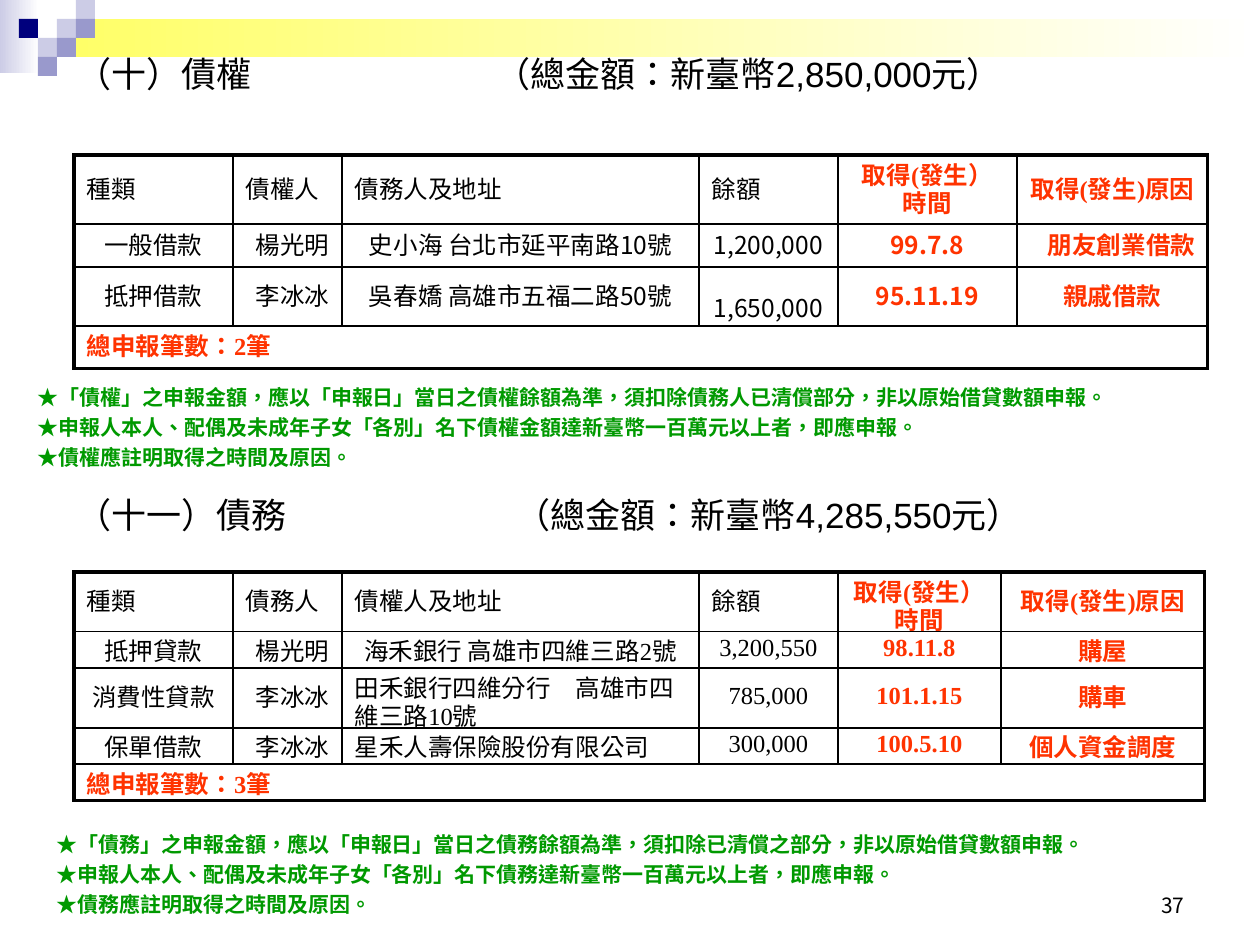
from lxml import etree
from pptx import Presentation
from pptx import util as u
from pptx.dml.color import RGBColor
from pptx.enum import shapes, text
from pptx.oxml import ns

PX = 914400 / 126
BLACK, RED, GREEN = "000000", "FF3300", "009900"
ARIAL, TIMES, NOTO = "Arial", "Times New Roman", "Noto Sans CJK SC"
LEFT, CENTER, RIGHT = text.PP_ALIGN.LEFT, text.PP_ALIGN.CENTER, text.PP_ALIGN.RIGHT
MIDDLE, BOTTOM = text.MSO_ANCHOR.MIDDLE, text.MSO_ANCHOR.BOTTOM


def px(length):
    return u.Emu(round(length * PX))


def color(value):
    return RGBColor.from_string(value)


def add_child(parent, tag, **attributes):
    return etree.SubElement(parent, ns.qn(tag), attributes)


def write(para, words, size, font, ink=BLACK, bold=False, align=LEFT, spacing=1.0):
    para.text = words
    para.alignment = align
    para.line_spacing = spacing
    for span in para.runs:
        span.font.size = u.Pt(size)
        span.font.name = font
        span.font.bold = bold
        span.font.color.rgb = color(ink)
        properties = span._r.get_or_add_rPr()
        properties.set("lang", "zh-TW")
        add_child(properties, "a:ea", typeface=NOTO)


def text_box(page, box, anchor=MIDDLE):
    frame = page.shapes.add_textbox(*map(px, box)).text_frame
    frame.word_wrap = True
    frame.vertical_anchor = anchor
    return frame


def rectangle(page, box, *inks):
    shape = page.shapes.add_shape(shapes.MSO_SHAPE.RECTANGLE, *map(px, box))
    shape.shadow.inherit = False
    shape.line.fill.background()
    if len(inks) == 1:
        shape.fill.solid()
        shape.fill.fore_color.rgb = color(inks[0])
    else:
        shape.fill.gradient()
        shape.fill.gradient_angle = 0
        for stop, ink in zip(shape.fill.gradient_stops, inks):
            stop.color.rgb = color(ink)


def decoration(page, box):
    left, top, width, side = box
    pale, violet, navy = "CCCCE6", "9999CC", "00007D"
    rectangle(page, (left, top, 2 * side + 1, 4 * side - 3), pale, "FFFFFF")
    rectangle(page, (left + 3 * side, top + side, width - 3 * side, 2 * side),
              "FFFF66", "FFFFFF")
    squares = [(3, 1, pale), (4, 0, pale), (4, 1, violet), (2, 2, pale),
               (1, 1, navy), (3, 2, violet), (2, 3, violet)]
    for column, row, ink in squares:
        rectangle(page, (left + column * side, top + row * side, side, side), ink)


def heading(page, box, name, total, tab):
    para = text_box(page, box).paragraphs[0]
    write(para, f"{name}\t（總金額：新臺幣{total}元）", 20, ARIAL, spacing=0.9)
    stops = add_child(para._p.get_or_add_pPr(), "a:tabLst")
    add_child(stops, "a:tab", pos=str(px(tab)), algn="l")


def notes(page, box, lines):
    frame = text_box(page, box)
    for index, line in enumerate(lines):
        para = frame.add_paragraph() if index else frame.paragraphs[0]
        write(para, "★" + line, 12, ARIAL, GREEN, True, spacing=1.2)


def page_number(page, box, number):
    para = text_box(page, box, BOTTOM).paragraphs[0]
    write(para, number, 12, NOTO, align=RIGHT)


def borders(cell, outer):
    properties = cell._tc.get_or_add_tcPr()
    for side, is_outer in zip("LRTB", outer):
        line = add_child(properties, f"a:ln{side}", w=str(u.Pt(2 if is_outer else 1)))
        add_child(add_child(line, "a:solidFill"), "a:srgbClr", val=BLACK)
    cell.fill.background()


def cell_align(row, column, words):
    if row == 0:
        return LEFT if column < 4 else CENTER
    if column == 1 or words == "朋友創業借款":
        return RIGHT
    return LEFT if column == 2 and not 13 <= len(words) <= 18 else CENTER


def ledger(page, box, widths, heights, rows, count, body_font):
    left, top = box
    table = page.shapes.add_table(len(heights), len(widths), px(left), px(top),
                                  px(sum(widths)), px(sum(heights))).table
    table.first_row = table.horz_banding = False
    for column, width in zip(table.columns, widths):
        column.width = px(width)
    for row, height in zip(table.rows, heights):
        row.height = px(height)
    last_row, last_column = len(heights) - 1, len(widths) - 1
    total = table.cell(last_row, 0)
    total.merge(table.cell(last_row, last_column))
    for row in range(len(heights)):
        for column in range(len(widths)):
            cell = table.cell(row, column)
            cell.vertical_anchor = MIDDLE
            borders(cell, (column == 0, column == last_column or cell.is_merge_origin,
                           row == 0, row == last_row))
            if row < last_row:
                words = rows[row][column]
                write(cell.text_frame.paragraphs[0], words, 14,
                      body_font if row else TIMES, RED if column > 3 else BLACK,
                      column > 3, cell_align(row, column, words), 0.8)
    write(total.text_frame.paragraphs[0], f"總申報筆數：{count}筆", 14, TIMES, RED, True,
          spacing=0.8)
    return table


def header(person, address):
    return ["種類", person, address, "餘額", "取得(發生）時間", "取得(發生)原因"]


def main():
    deck = Presentation()
    deck.slide_width, deck.slide_height = px(1260), px(945)
    page = deck.slides.add_slide(deck.slide_layouts[6])
    shared_widths = [159, 109, 357, 139]

    decoration(page, (0, 0, 1260, 19))
    page_number(page, (903, 861, 294, 63), "37")

    heading(page, (64, 47, 1111, 59), "（十）債權", "2,850,000", 419)
    claims = ledger(page, (74, 155), shared_widths + [179, 191], [69, 43, 59, 43], [
        header("債權人", "債務人及地址"),
        ["一般借款", "楊光明", "史小海 台北市延平南路10號", "1,200,000", "99.7.8", "朋友創業借款"],
        ["抵押借款", "李冰冰", "吳春嬌 高雄市五福二路50號", "1,650,000", "95.11.19", "親戚借款"],
    ], 2, NOTO)
    lowered = claims.cell(2, 3)
    lowered.vertical_anchor = BOTTOM
    lowered.margin_bottom = px(3)
    notes(page, (25, 373, 1235, 103), [
        "「債權」之申報金額，應以「申報日」當日之債權餘額為準，須扣除債務人已清償部分，非以原始借貸數額申報。",
        "申報人本人、配偶及未成年子女「各別」名下債權金額達新臺幣一百萬元以上者，即應申報。",
        "債權應註明取得之時間及原因。",
    ])

    heading(page, (64, 493, 1121, 49), "（十一）債務", "4,285,550", 439)
    ledger(page, (74, 572), shared_widths + [163, 204], [59, 36, 60, 36, 36], [
        header("債務人", "債權人及地址"),
        ["抵押貸款", "楊光明", "海禾銀行 高雄市四維三路2號", "3,200,550", "98.11.8", "購屋"],
        ["消費性貸款", "李冰冰", "田禾銀行四維分行　高雄市四維三路10號", "785,000", "101.1.15", "購車"],
        ["保單借款", "李冰冰", "星禾人壽保險股份有限公司", "300,000", "100.5.10", "個人資金調度"],
    ], 3, TIMES)
    notes(page, (44, 820, 1160, 103), [
        "「債務」之申報金額，應以「申報日」當日之債務餘額為準，須扣除已清償之部分，非以原始借貸數額申報。",
        "申報人本人、配偶及未成年子女「各別」名下債務達新臺幣一百萬元以上者，即應申報。",
        "債務應註明取得之時間及原因。",
    ])
    deck.save("out.pptx")


if __name__ == "__main__":
    main()
